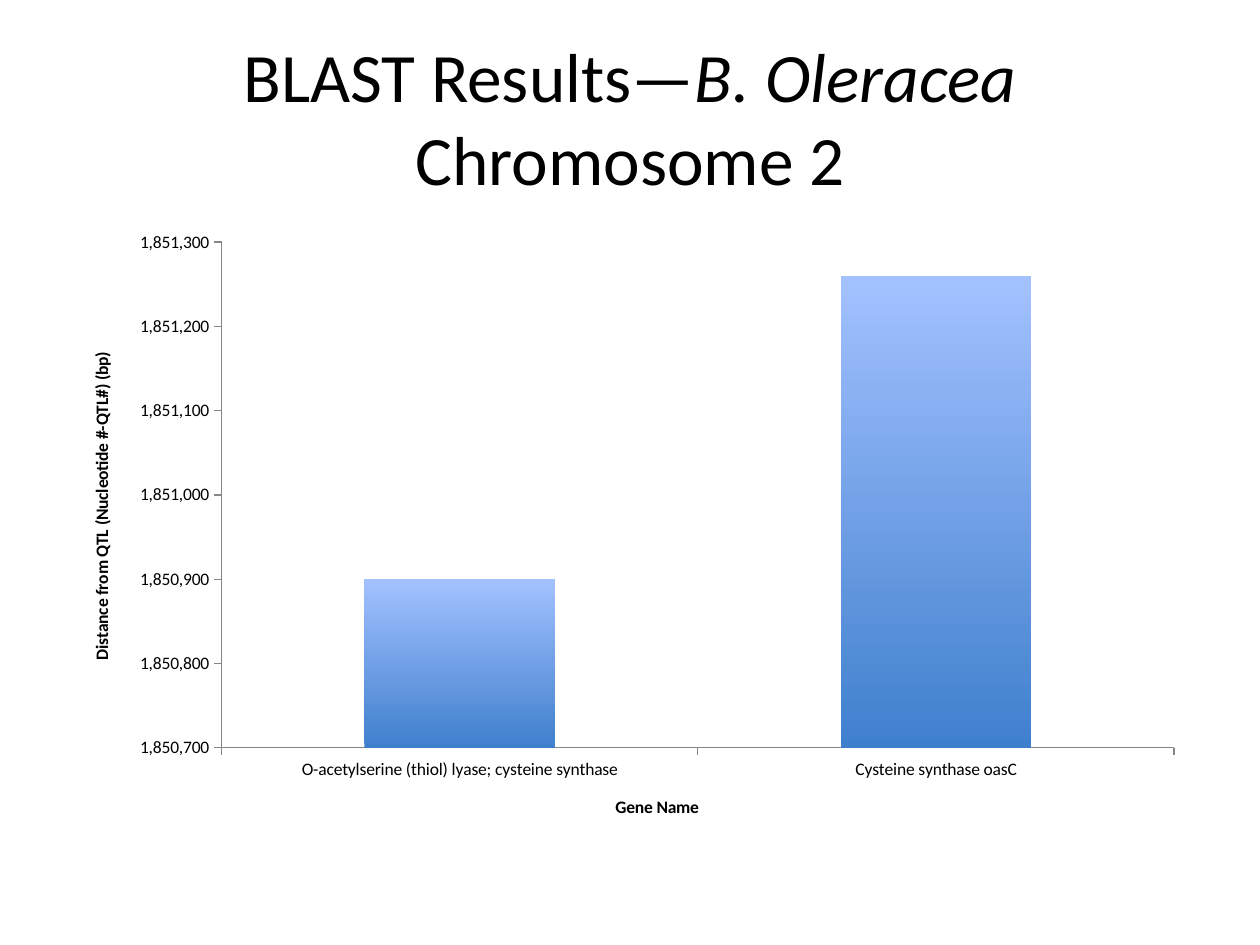
from lxml import etree
from pptx import Presentation
from pptx.chart.data import CategoryChartData
from pptx.dml.color import RGBColor
from pptx.enum.chart import XL_CHART_TYPE, XL_TICK_MARK
from pptx.enum.text import MSO_ANCHOR, PP_ALIGN
from pptx.oxml.ns import qn
from pptx.util import Pt

COLUMN = XL_CHART_TYPE.COLUMN_CLUSTERED
OUT, NONE = XL_TICK_MARK.OUTSIDE, XL_TICK_MARK.NONE
MIDDLE, CENTER = MSO_ANCHOR.MIDDLE, PP_ALIGN.CENTER

GENES = {
    "O-acetylserine (thiol) lyase; cysteine synthase": 1850900,
    "Cysteine synthase oasC": 1851260,
}


def color(text):
    return RGBColor.from_string(text)


def assign(target, values):
    for name, value in values.items():
        setattr(target, name, value)


class Deck:
    face = "Calibri"
    ink = "000000"
    line = "868686"
    bar = ("3F80CD", "A3C1FF")  # bottom, top

    def __init__(self, wide, high):
        self.file = Presentation()
        assign(self.file, {"slide_width": Pt(wide), "slide_height": Pt(high)})
        self.slide = self.file.slides.add_slide(self.file.slide_layouts[5])

    def style(self, font, size, **more):
        assign(font, {"name": self.face, "size": Pt(size), **more})
        font.color.rgb = color(self.ink)

    def title(self, box, parts, size):
        """Fill the title with (text, italic) parts."""
        shape = self.slide.shapes.title
        assign(shape, dict(zip(("left", "top", "width", "height"), map(Pt, box))))
        frame = shape.text_frame
        assign(frame, {"vertical_anchor": MIDDLE, "word_wrap": True})
        para = frame.paragraphs[0]
        para.alignment = CENTER
        for text, slant in parts:
            run = para.add_run()
            run.text = text
            self.style(run.font, size, italic=slant)

    def axis(self, axis, title, size):
        assign(axis, {"has_major_gridlines": False, "major_tick_mark": OUT,
                      "minor_tick_mark": NONE})
        axis.format.line.color.rgb = color(self.line)
        axis.format.line.width = Pt(0.75)
        self.style(axis.tick_labels.font, size)
        frame = axis.axis_title.text_frame
        frame.text = title
        self.style(frame.paragraphs[0].runs[0].font, size, bold=True)

    def plot_box(self, chart, box, inner):
        """Fix the inner plot area, in points from the chart's corner."""
        area = chart._chartSpace.chart.plotArea
        for old in area.findall(qn("c:layout")):
            area.remove(old)
        layout = etree.Element(qn("c:layout"))
        manual = etree.SubElement(layout, qn("c:manualLayout"))
        wide, high = box[2:]
        shares = [part / full for part, full in zip(inner, (wide, high) * 2)]
        rules = {"layoutTarget": "inner", "xMode": "edge", "yMode": "edge",
                 **dict(zip("xywh", shares))}
        for name, value in rules.items():
            etree.SubElement(manual, qn("c:" + name)).set("val", str(value))
        area.insert(0, layout)

    def columns(self, box, inner, data, names, scale, size):
        source = CategoryChartData(number_format="#,##0")
        source.categories = list(data)
        source.add_series("Series 1", list(data.values()))
        chart = self.slide.shapes.add_chart(COLUMN, *map(Pt, box), source).chart
        assign(chart, {"has_legend": False, "has_title": False})
        self.style(chart.font, size)
        for axis, name in zip((chart.category_axis, chart.value_axis), names):
            self.axis(axis, name, size)
        assign(chart.value_axis, scale)
        labels = chart.value_axis.tick_labels
        assign(labels, {"number_format": "#,##0", "number_format_is_linked": False})
        plot = chart.plots[0]
        assign(plot, {"gap_width": 150, "vary_by_categories": False})
        fill = plot.series[0].format.fill
        fill.gradient()
        fill.gradient_angle = 90
        for stop, tone in zip(fill.gradient_stops, self.bar):
            stop.color.rgb = color(tone)
        self.plot_box(chart, box, inner)


def main():
    deck = Deck(720, 540)
    deck.title(
        (36, 21.6, 648, 90),
        [("BLAST Results—", False), ("B. Oleracea ", True), ("Chromosome 2", False)],
        39.6,
    )
    deck.columns(
        (36, 126, 648, 356.4),
        (90.6, 12.4, 544.4, 289),
        GENES,
        ("Gene Name", "Distance from QTL (Nucleotide #-QTL#) (bp)"),
        {"minimum_scale": 1850700, "maximum_scale": 1851300, "major_unit": 100},
        10,
    )
    deck.file.save("out.pptx")


if __name__ == "__main__":
    main()
